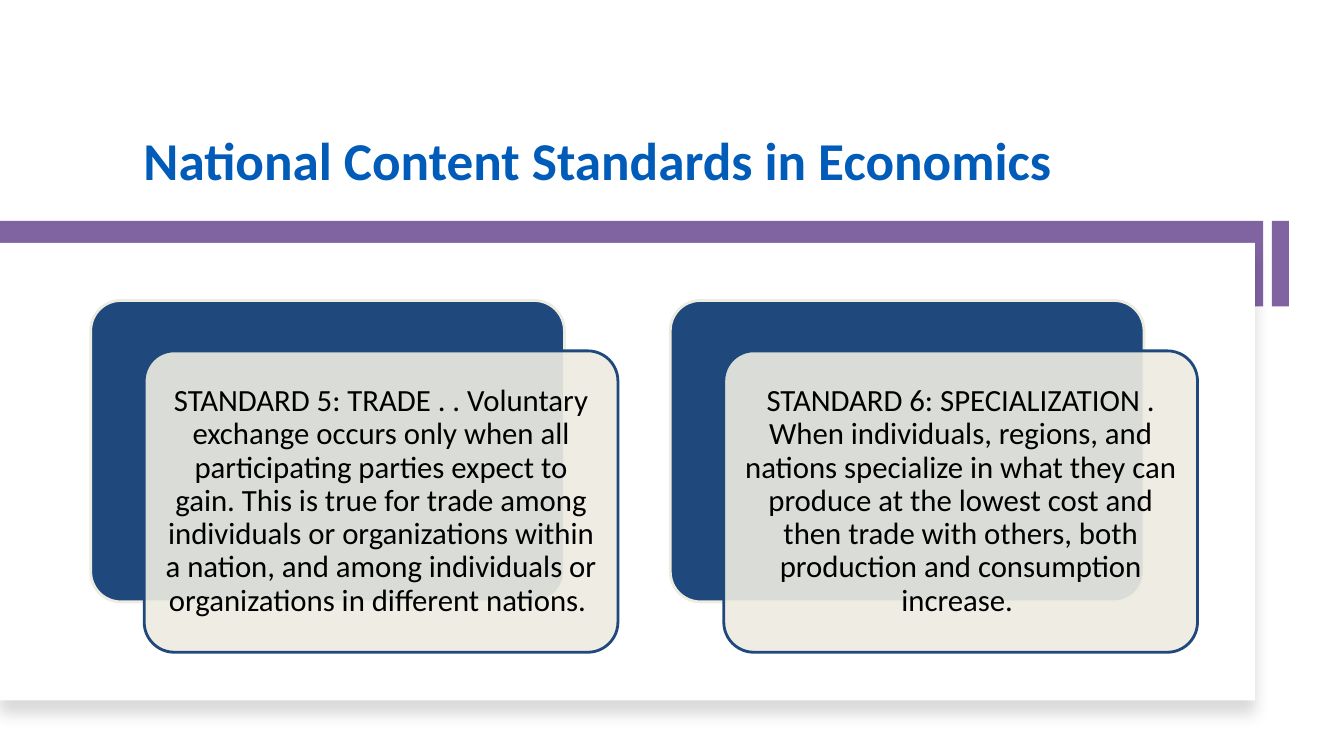
from dataclasses import dataclass

from lxml.etree import SubElement
from pptx import Presentation
from pptx.dml.color import RGBColor
from pptx.enum.shapes import MSO_SHAPE as Shape
from pptx.enum.text import MSO_ANCHOR as Anchor, PP_ALIGN as Align
from pptx.oxml.ns import qn
from pptx.util import Pt


@dataclass(frozen=True)
class Theme:
    font: str = "Calibri"
    title_size: int = 38
    body_size: int = 22
    title: str = "005CB8"
    accent: str = "8064A2"
    navy: str = "1F497D"
    cream: str = "EEECE1"
    white: str = "FFFFFF"
    black: str = "000000"


THEME = Theme()

STANDARDS = [
    "STANDARD 5: TRADE . . Voluntary exchange occurs only when all participating "
    "parties expect to gain. This is true for trade among individuals or organizations "
    "within a nation, and among individuals or organizations in different nations. ",
    "STANDARD 6: SPECIALIZATION . When individuals, regions, and nations specialize in "
    "what they can produce at the lowest cost and then trade with others, both "
    "production and consumption increase. ",
]

# Card layout, in points
CARD_LEFT, CARD_TOP, CARD_STEP = 64.8, 214.6, 414
CARD_WIDTH, CARD_HEIGHT = 338.4, 215.3
FRONT_SHIFT_X, FRONT_SHIFT_Y = 38.2, 36
TEXT_MARGIN = 6


def set_alpha(color_element, percent):
    SubElement(color_element, qn("a:alpha"), val=str(percent * 1000))


def add_box(slide, left, top, width, height, fill, kind=Shape.RECTANGLE,
            line=None, opacity=100):
    shape = slide.shapes.add_shape(kind, Pt(left), Pt(top), Pt(width), Pt(height))
    shape.shadow.inherit = False
    shape.fill.solid()
    shape.fill.fore_color.rgb = RGBColor.from_string(fill)
    if opacity < 100:
        set_alpha(shape.element.spPr.find(qn("a:solidFill"))[0], opacity)
    if line:
        shape.line.color.rgb = RGBColor.from_string(line)
        shape.line.width = Pt(2)
    else:
        shape.line.fill.background()
    return shape


def add_shadow(shape, blur, distance, angle, opacity):
    effects = shape.element.spPr.find(qn("a:effectLst"))
    shadow = SubElement(effects, qn("a:outerShdw"), blurRad=str(Pt(blur)),
                        dist=str(Pt(distance)), dir=str(angle * 60000),
                        algn="t", rotWithShape="0")
    color = SubElement(shadow, qn("a:srgbClr"), val=THEME.black)
    set_alpha(color, opacity)


def add_text(slide, text, left, top, width, height, *, size, color, bold=False,
             anchor=Anchor.MIDDLE, spacing=1.0, inset_x=6.5, inset_y=6.5):
    box = slide.shapes.add_textbox(Pt(left), Pt(top), Pt(width), Pt(height))
    frame = box.text_frame
    frame.word_wrap = True
    frame.vertical_anchor = anchor
    frame.margin_left = frame.margin_right = Pt(inset_x)
    frame.margin_top = frame.margin_bottom = Pt(inset_y)
    paragraph = frame.paragraphs[0]
    paragraph.alignment = Align.CENTER
    paragraph.line_spacing = spacing
    run = paragraph.add_run()
    run.text = text
    run.font.name = THEME.font
    run.font.size = Pt(size)
    run.font.bold = bold
    run.font.color.rgb = RGBColor.from_string(color)


def add_card(slide, left, text):
    front_left, front_top = left + FRONT_SHIFT_X, CARD_TOP + FRONT_SHIFT_Y
    back = add_box(slide, left, CARD_TOP, CARD_WIDTH, CARD_HEIGHT, THEME.navy,
                   kind=Shape.ROUNDED_RECTANGLE, line=THEME.cream)
    front = add_box(slide, front_left, front_top, CARD_WIDTH, CARD_HEIGHT, THEME.cream,
                    kind=Shape.ROUNDED_RECTANGLE, line=THEME.navy, opacity=90)
    for panel in (back, front):
        panel.adjustments[0] = 0.1
    add_text(slide, text, front_left + TEXT_MARGIN, front_top + TEXT_MARGIN,
             CARD_WIDTH - 2 * TEXT_MARGIN, CARD_HEIGHT - 2 * TEXT_MARGIN,
             size=THEME.body_size, color=THEME.black, spacing=0.9)


def main():
    presentation = Presentation()
    presentation.slide_width, presentation.slide_height = Pt(960), Pt(540)
    slide = presentation.slides.add_slide(presentation.slide_layouts[6])

    # Title
    add_text(slide, "National Content Standards in Economics", 63.4, 30.2, 727.2, 110.2,
             size=THEME.title_size, color=THEME.title, bold=True,
             anchor=Anchor.BOTTOM, spacing=Pt(57), inset_x=7.2, inset_y=3.6)

    # Purple band with its end tab, behind the white content panel
    add_box(slide, 908.6, 157.7, 12.2, 61.2, THEME.accent)
    add_box(slide, 0, 157.7, 902.2, 61.2, THEME.accent)
    content_panel = add_box(slide, 0, 173.5, 896.4, 326.9, THEME.white)
    add_shadow(content_panel, blur=11, distance=10, angle=90, opacity=15)

    # Standards
    for index, text in enumerate(STANDARDS):
        add_card(slide, CARD_LEFT + index * CARD_STEP, text)

    presentation.save("out.pptx")


if __name__ == "__main__":
    main()
